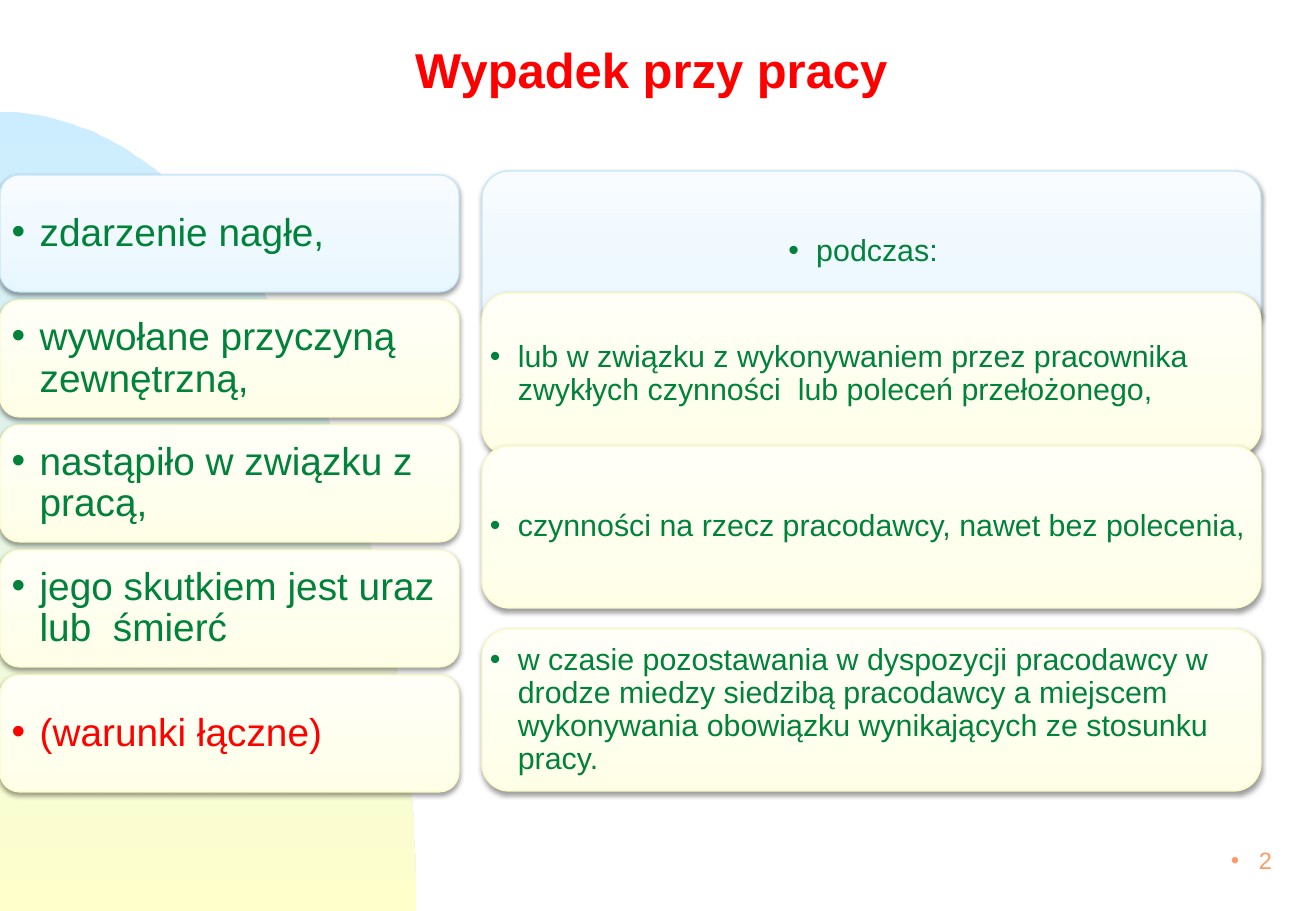
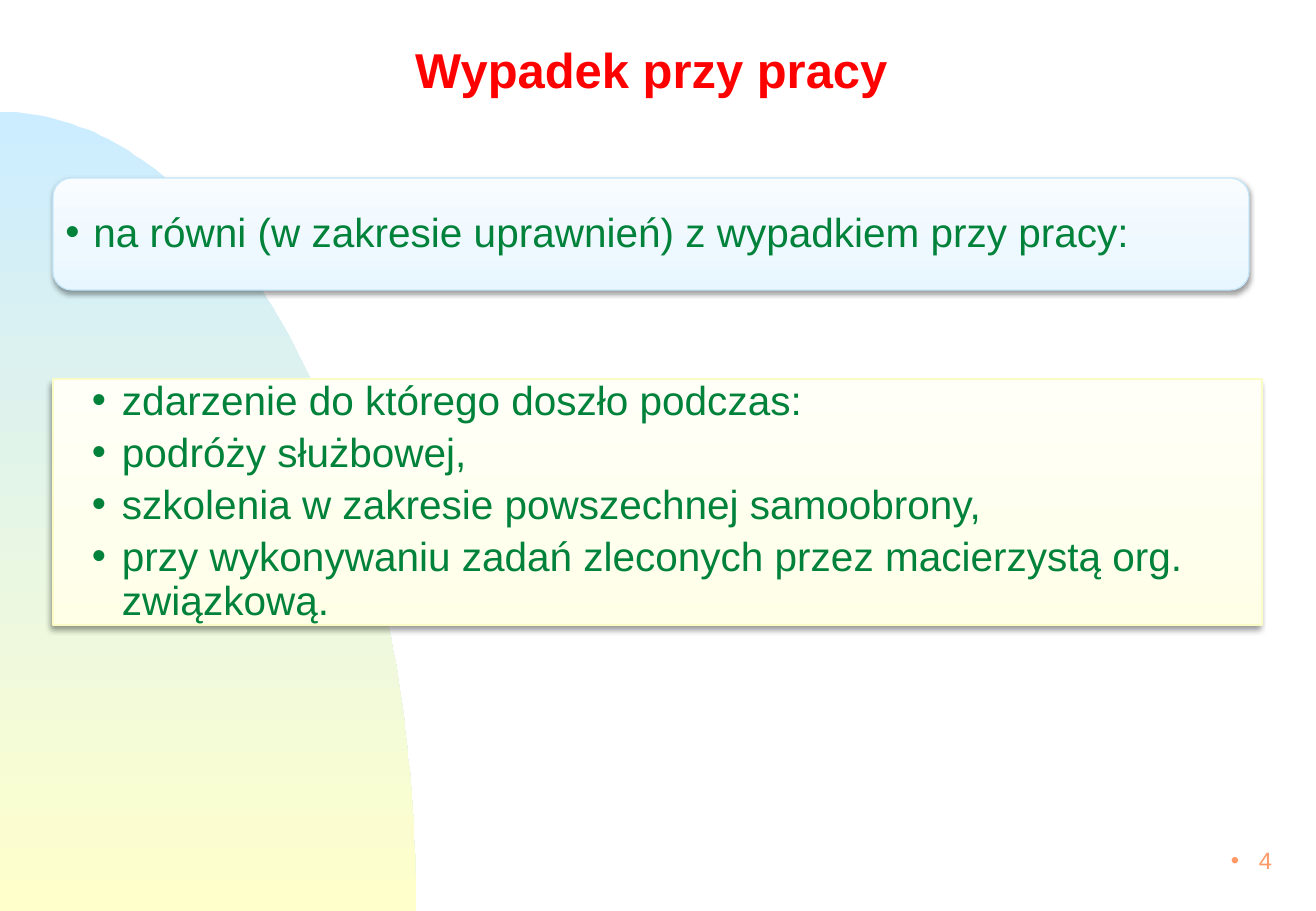
import copy
import math

import lxml.etree
import pptx
import pptx.dml.color
import pptx.enum.shapes
import pptx.enum.text
import pptx.oxml.ns
import pptx.util

EMU_PER_PX = 7526
SLIDE_W, SLIDE_H = 1316, 911
FONT = "Arial"
RED, GREEN, ORANGE = "FF0000", "00823B", "FF9966"
HANGING = 28

# Fill stops (position, colour) and line colour of the cards
BLUE = ([(0, "E7F6FF"), (35, "EEF8FF"), (100, "F8FCFF")], "C6E7FB")
YELLOW = ([(0, "FFFFE7"), (35, "FFFFEE"), (100, "FFFFF8")], "FBFBC6")
ARC_STOPS = [(0, "CCECFF"), (100, "FFFFCC")]

# Shadows: blur pt, distance pt, direction, opacity %
SOFT = (3.1, 1.6, 90, 38)
SLANTED = (4, 3, 135, 40)

ALIGN = pptx.enum.text.PP_ALIGN
SHAPE = pptx.enum.shapes.MSO_SHAPE
qn = pptx.oxml.ns.qn


def px(n):
    return pptx.util.Emu(n * EMU_PER_PX)


def rgb(color):
    return pptx.dml.color.RGBColor.from_string(color)


def set_gradient(s, stops, angle):
    s.fill.gradient()
    gs_list = s._element.spPr.find(".//" + qn("a:gsLst"))
    while len(gs_list) < len(stops):
        gs_list.append(copy.deepcopy(gs_list[0]))
    for stop, (pos, color) in zip(s.fill.gradient_stops, stops):
        stop.position = pos / 100
        stop.color.rgb = rgb(color)
    s.fill.gradient_angle = angle


def set_shadow(s, blur, dist, direction, opacity):
    s.shadow.inherit = False
    effects = s._element.spPr.find(qn("a:effectLst"))
    outer = lxml.etree.SubElement(
        effects, qn("a:outerShdw"), blurRad=str(pptx.util.Pt(blur)),
        dist=str(pptx.util.Pt(dist)), dir=str(direction * 60000), rotWithShape="0")
    color = lxml.etree.SubElement(outer, qn("a:srgbClr"), val="000000")
    lxml.etree.SubElement(color, qn("a:alpha"), val=str(opacity * 1000))


def write(s, *lines, size, color=GREEN, bold=False, align=ALIGN.LEFT,
          spacing=0.9, after=0, hanging=0, insets=(0, 0, 0, 0)):
    tf = s.text_frame
    tf.word_wrap = True
    tf.vertical_anchor = pptx.enum.text.MSO_ANCHOR.MIDDLE
    tf.margin_left, tf.margin_top, tf.margin_right, tf.margin_bottom = map(px, insets)
    for i, line in enumerate(lines):
        p = tf.add_paragraph() if i else tf.paragraphs[0]
        p.alignment = align
        p.line_spacing = spacing
        p.space_after = pptx.util.Pt(after)
        r = p.add_run()
        r.text = line
        r.font.name, r.font.size, r.font.bold = FONT, pptx.util.Pt(size), bold
        r.font.color.rgb = rgb(color)
        if hanging:
            pPr = p._p.get_or_add_pPr()
            pPr.set("marL", str(px(hanging)))
            pPr.set("indent", str(-px(hanging)))
            lxml.etree.SubElement(pPr, qn("a:buFont"), typeface=FONT)
            lxml.etree.SubElement(pPr, qn("a:buChar"), char="•")


def add_box(slide, x, y, w, h):
    return slide.shapes.add_textbox(px(x), px(y), px(w), px(h))


def add_card(slide, x, y, w, h, style, kind=SHAPE.ROUNDED_RECTANGLE, shadow=SOFT):
    stops, line = style
    s = slide.shapes.add_shape(kind, px(x), px(y), px(w), px(h))
    set_gradient(s, stops, 90)
    s.line.color.rgb = rgb(line)
    s.line.width = pptx.util.Pt(0.75)
    set_shadow(s, *shadow)
    return s


def add_bullet_card(slide, x, y, w, h, style, text, inset, **fmt):
    # The rounded corners already push the text in by about 5 % of the height
    pad = inset - round(0.049 * h)
    s = add_card(slide, x, y, w, h, style)
    write(s, text, hanging=HANGING, insets=(pad,) * 4, **fmt)


def add_arc(slide, w, h, steps=90):
    """Quarter ellipse in the lower left corner."""
    angles = [math.pi / 2 * i / steps for i in range(steps + 1)]
    points = [(w * math.sin(a), SLIDE_H - h * math.cos(a)) for a in angles]
    builder = slide.shapes.build_freeform(0, SLIDE_H, scale=EMU_PER_PX)
    builder.add_line_segments(points, close=True)
    s = builder.convert_to_shape()
    set_gradient(s, ARC_STOPS, 270)
    s.line.fill.background()
    s.shadow.inherit = False


def add_base(prs, number):
    """Slide with the arc, title and page number."""
    slide = prs.slides.add_slide(prs.slide_layouts[6])
    add_arc(slide, 416, 799)
    write(add_box(slide, 66, 0, 1185, 152), "Wypadek przy pracy ", size=29,
          color=RED, bold=True, align=ALIGN.CENTER, spacing=0.7)
    write(add_box(slide, 1010, 830, 274, 61), number, size=14, color=ORANGE,
          align=ALIGN.RIGHT, spacing=1.0, hanging=HANGING, insets=(12, 6, 12, 6))
    return slide


def add_conditions(slide, x, y, w):
    """Column of equal cards: the features of an accident."""
    rows = [
        ("zdarzenie nagłe,", BLUE, GREEN),
        ("wywołane przyczyną zewnętrzną,", YELLOW, GREEN),
        ("nastąpiło w związku z pracą,", YELLOW, GREEN),
        ("jego skutkiem jest uraz  lub  śmierć", YELLOW, GREEN),
        ("(warunki łączne)", YELLOW, RED),
    ]
    for i, (text, style, color) in enumerate(rows):
        add_bullet_card(slide, x, y + 125 * i, w, 117, style, text, 12,
                        size=23, color=color)


def add_circumstances(slide, x, y, w):
    """Column of overlapping cards: when the accident happens."""
    rows = [
        (0, "podczas:  ", BLUE, ALIGN.CENTER),
        (122, "lub w związku z wykonywaniem przez pracownika zwykłych czynności  "
              "lub poleceń przełożonego,", YELLOW, ALIGN.LEFT),
        (275, "czynności na rzecz pracodawcy, nawet bez polecenia,", YELLOW, ALIGN.LEFT),
        (458, "w czasie pozostawania w dyspozycji pracodawcy w drodze miedzy siedzibą "
              "pracodawcy a miejscem wykonywania obowiązku wynikających ze stosunku "
              "pracy.", YELLOW, ALIGN.LEFT),
    ]
    for dy, text, style, align in rows:
        add_bullet_card(slide, x, y + dy, w, 162, style, text, 8, size=18, align=align)


def add_equal_events(slide, x, y):
    """Heading card and the list of events below it."""
    add_bullet_card(slide, x, y, 1196, 112, BLUE,
                    "na równi (w zakresie uprawnień) z wypadkiem przy pracy:", 12, size=24)
    s = add_card(slide, x, y + 201, 1209, 246, YELLOW, SHAPE.RECTANGLE, SLANTED)
    write(s, "zdarzenie do którego doszło podczas:",
          "podróży służbowej,",
          "szkolenia w zakresie powszechnej samoobrony,",
          "przy wykonywaniu zadań zleconych przez macierzystą org. związkową.",
          size=24, after=5, hanging=30, insets=(39, 4, 23, 4))


def main():
    prs = pptx.Presentation()
    prs.slide_width, prs.slide_height = px(SLIDE_W), px(SLIDE_H)

    slide = add_base(prs, "2")
    add_conditions(slide, 0, 175, 459)
    add_circumstances(slide, 482, 171, 779)

    slide = add_base(prs, "4")
    add_equal_events(slide, 53, 178)

    prs.save("out.pptx")


if __name__ == "__main__":
    main()
